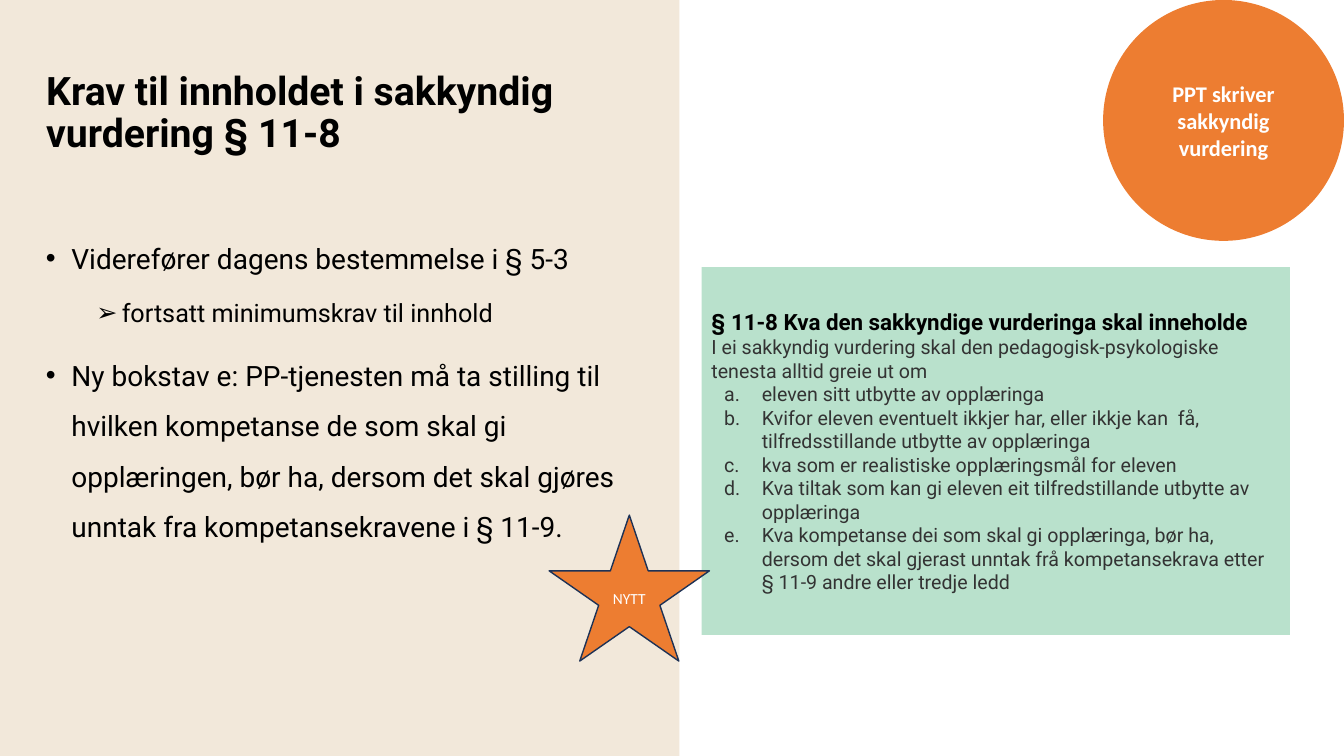
from lxml import etree
from pptx import Presentation
from pptx.dml.color import RGBColor
from pptx.enum.shapes import MSO_SHAPE
from pptx.enum.text import MSO_ANCHOR, PP_ALIGN
from pptx.oxml.ns import qn
from pptx.util import Cm, Pt

RECT = MSO_SHAPE.RECTANGLE
DISC = MSO_SHAPE.FLOWCHART_CONNECTOR
STAR = MSO_SHAPE.STAR_5_POINT
LEFT, CENTER = PP_ALIGN.LEFT, PP_ALIGN.CENTER
TOP, MIDDLE = MSO_ANCHOR.TOP, MSO_ANCHOR.MIDDLE

COLORS = {"sand": "F2E8DA", "orange": "ED7D31", "mint": "B9E1CC", "navy": "1E3256",
          "black": "000000", "gray": "333333", "white": "FFFFFF"}

WIDTH, HEIGHT = 33.87, 19.05
TITLE = "Krav til innholdet i sakkyndig vurdering § 11-8"
POINTS = [
    (0, "Viderefører dagens bestemmelse i § 5-3"),
    (1, "fortsatt minimumskrav til innhold"),
    (0, "Ny bokstav e: PP-tjenesten må ta stilling til hvilken kompetanse de som skal gi "
        "opplæringen, bør ha, dersom det skal gjøres unntak fra kompetansekravene i § 11-9."),
]
LEVELS = [
    {"size": 20, "before": 10, "margin": 0.64, "char": "•"},
    {"size": 18, "before": 5, "margin": 1.91, "char": "➢"},
]
LAW_HEAD = "§ 11-8 Kva den sakkyndige vurderinga skal inneholde"
LAW_INTRO = ("I ei sakkyndig vurdering skal den pedagogisk-psykologiske "
             "tenesta alltid greie ut om")
LAW_ITEMS = [
    "eleven sitt utbytte av opplæringa",
    "Kvifor eleven eventuelt ikkjer har, eller ikkje kan  få, "
    "tilfredsstillande utbytte av opplæringa",
    "kva som er realistiske opplæringsmål for eleven",
    "Kva tiltak som kan gi eleven eit tilfredstillande utbytte av opplæringa",
    "Kva kompetanse dei som skal gi opplæringa, bør ha, dersom det skal gjerast "
    "unntak frå kompetansekrava etter § 11-9 andre eller tredje ledd",
]
BADGE = "PPT skriver sakkyndig vurdering"
NEW = "NYTT"


def color(name):
    return RGBColor.from_string(COLORS[name])


def write(frame, text, size=14, font="Roboto", ink="black", bold=False, align=LEFT,
          level=0, spacing=1.0, before=0, margin=0, hang=0, char=None, auto=None):
    """Add a paragraph, filling the first one while it is still empty."""
    first = frame.paragraphs[0]
    para = first if not first.runs else frame.add_paragraph()
    para.alignment, para.level = align, level
    para.line_spacing, para.space_before = spacing, Pt(before)
    run = para.add_run()
    run.text = text
    run.font.size, run.font.name, run.font.bold = Pt(size), font, bold
    run.font.color.rgb = color(ink)
    props = para._p.get_or_add_pPr()
    props.set("marL", str(Cm(margin)))
    props.set("indent", str(Cm(-hang)))
    if char:
        etree.SubElement(props, qn("a:buFont"), typeface="Arial")
        etree.SubElement(props, qn("a:buChar"), char=char)
    elif auto:
        etree.SubElement(props, qn("a:buAutoNum"), type=auto)


def place(shape, left, top, width, height):
    shape.left, shape.top = Cm(left), Cm(top)
    shape.width, shape.height = Cm(width), Cm(height)


def setup(shape, anchor):
    frame = shape.text_frame
    frame.word_wrap, frame.vertical_anchor = True, anchor
    return frame


def draw(slide, kind, box, fill, line=None):
    shape = slide.shapes.add_shape(kind, *map(Cm, box))
    shape.shadow.inherit = False
    shape.fill.solid()
    shape.fill.fore_color.rgb = color(fill)
    if line:
        shape.line.color.rgb = color(line)
        shape.line.width = Pt(1)
    else:
        shape.line.fill.background()
    return shape


def main():
    deck = Presentation()
    deck.slide_width, deck.slide_height = Cm(WIDTH), Cm(HEIGHT)
    slide = deck.slides.add_slide(deck.slide_layouts[5])

    title = slide.shapes.title
    panel = draw(slide, RECT, (0, 0, 17.12, HEIGHT), "sand")
    title.element.addprevious(panel.element)
    place(title, 0.91, 1.02, 16.41, 3.68)
    write(setup(title, MIDDLE), TITLE, size=28, bold=True, spacing=0.9)

    body = slide.shapes.add_textbox(Cm(0.91), Cm(5.54), Cm(15.67), Cm(9.32))
    frame = setup(body, TOP)
    for level, text in POINTS:
        write(frame, text, level=level, spacing=1.5, hang=0.64, **LEVELS[level])

    side = 6.07
    disc = draw(slide, DISC, (WIDTH - side, 0, side, side), "orange")
    write(setup(disc, MIDDLE), BADGE, size=16, font="Calibri", ink="white",
          bold=True, align=CENTER)

    law = draw(slide, RECT, (17.68, 6.73, 14.83, 9.27), "mint")
    frame = setup(law, MIDDLE)
    write(frame, LAW_HEAD, size=16, bold=True)
    write(frame, LAW_INTRO, ink="gray")
    for item in LAW_ITEMS:
        write(frame, item, ink="gray", level=1, margin=1.27, hang=0.95,
              auto="alphaLcPeriod")

    star = draw(slide, STAR, (13.84, 12.98, 4.04, 3.68), "orange", "navy")
    write(setup(star, MIDDLE), NEW, size=11, font="Calibri", ink="white", align=CENTER)

    deck.save("out.pptx")


if __name__ == "__main__":
    main()
